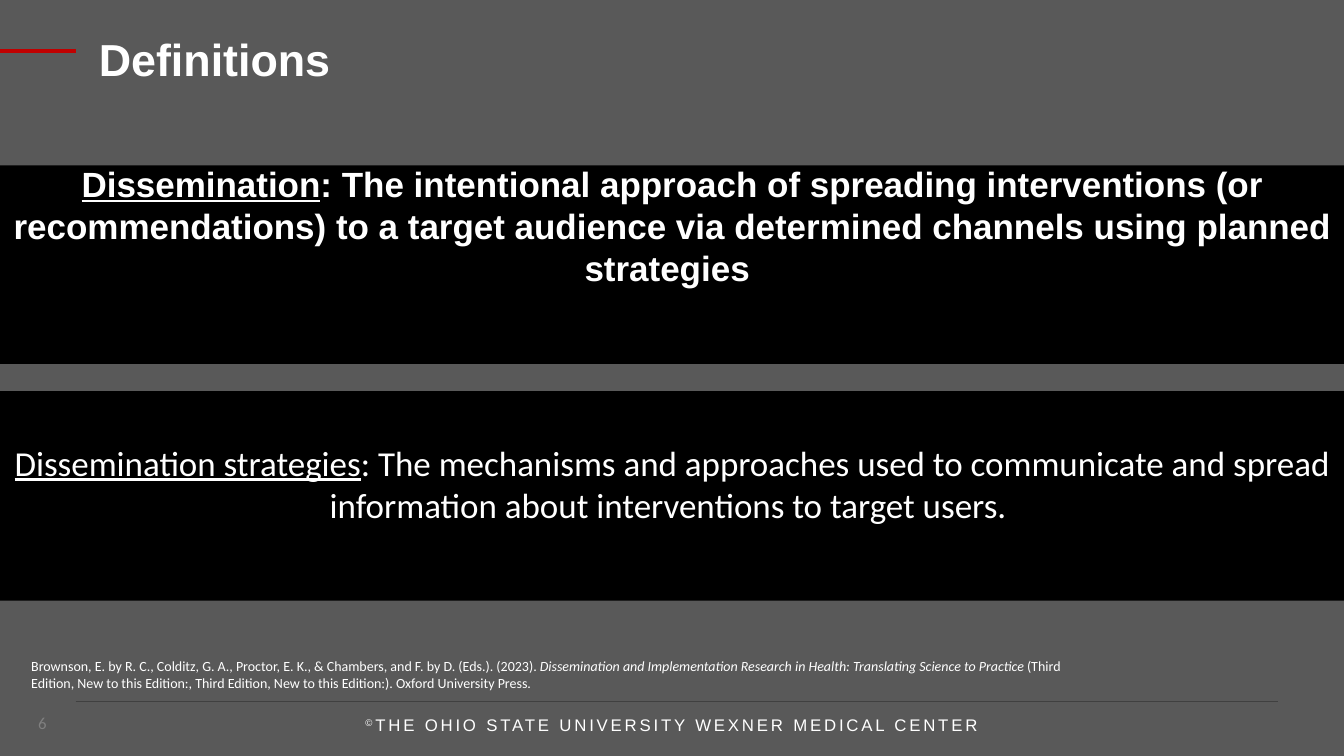
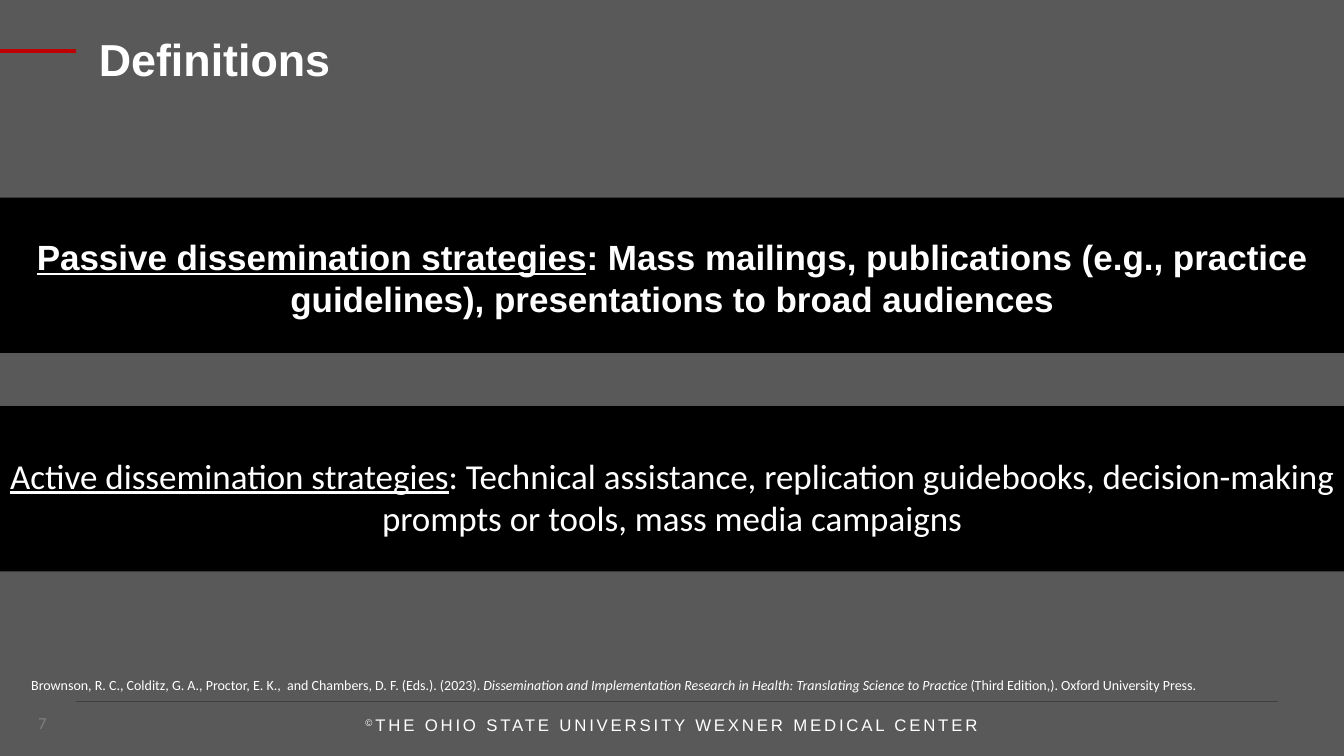
from lxml.etree import SubElement
from pptx import Presentation
from pptx.dml.color import RGBColor
from pptx.enum.shapes import MSO_CONNECTOR, MSO_SHAPE
from pptx.enum.text import MSO_ANCHOR, MSO_AUTO_SIZE, PP_ALIGN
from pptx.oxml.ns import qn
from pptx.util import Inches, Pt

WIDE, HIGH = 13.33, 7.5
EDGE = 0.75
HUES = {"back": "595959", "band": "000000", "text": "FFFFFF",
        "mark": "C00000", "rule": "404040", "page": "808080"}
HEAD, BODY = "Arial", "Calibri"
BOOK = ("Dissemination and Implementation Research in Health: "
        "Translating Science to Practice")
OWNER = "THE OHIO STATE UNIVERSITY WEXNER MEDICAL CENTER"

PAGES = [
    {"page": 6, "pad": 0.75,
     "bands": [
         ((0, 1.64, WIDE, 1.97), "Dissemination",
          ": The intentional approach of spreading interventions (or "
          "recommendations) to a target audience via determined channels "
          "using planned strategies "),
         ((0, 3.88, WIDE, 2.08), "Dissemination strategies",
          ": The mechanisms and approaches used to communicate and spread "
          "information about interventions to target users. ")],
     "cite": ((0.31, 6.51, 10.29, 0.52),
              "Brownson, E. by R. C., Colditz, G. A., Proctor, E. K., & "
              "Chambers, and F. by D. (Eds.). (2023). ",
              " (Third Edition, New to this Edition:, Third Edition, New to "
              "this Edition:). Oxford University Press.")},
    {"page": 7, "pad": 0.33,
     "bands": [
         ((0, 1.96, WIDE, 1.54), "Passive dissemination strategies",
          ": Mass mailings, publications (e.g., practice guidelines), "
          "presentations to broad audiences"),
         ((0, 4.03, WIDE, 1.64), "Active dissemination strategies",
          ": Technical assistance, replication guidebooks, decision-making "
          "prompts or tools, mass media campaigns")],
     "cite": ((0.31, 6.7, 12.2, 0.35),
              "Brownson, R. C., Colditz, G. A., Proctor, E. K.,  and "
              "Chambers, D. F. (Eds.). (2023). ",
              " (Third Edition,). Oxford University Press.")},
]


def hue(name):
    return RGBColor.from_string(HUES[name])


def place(shape, box):
    shape.left, shape.top, shape.width, shape.height = map(Inches, box)


def setup(shape, anchor, pads):
    """Set the text frame; pads are left, top, right and bottom."""
    frame = shape.text_frame
    frame.word_wrap = True
    frame.auto_size = MSO_AUTO_SIZE.NONE
    frame.vertical_anchor = anchor
    (frame.margin_left, frame.margin_top,
     frame.margin_right, frame.margin_bottom) = map(Inches, pads)
    return frame.paragraphs[0]


def write(para, texts, font, size, color="text", bold=False):
    """Add one run for each text and return the runs."""
    runs = []
    for text in texts:
        run = para.add_run()
        run.text = text
        run.font.name, run.font.size, run.font.bold = font, Pt(size), bold
        run.font.color.rgb = hue(color)
        runs.append(run)
    return runs


def label(slide, box, pads=(0, 0.01, 0, 0)):
    return setup(slide.shapes.add_textbox(*map(Inches, box)),
                 MSO_ANCHOR.TOP, pads)


def line(slide, start, end, y, color, width):
    item = slide.shapes.add_connector(
        MSO_CONNECTOR.STRAIGHT, *map(Inches, (start, y, end, y)))
    item.line.color.rgb = hue(color)
    item.line.width = Pt(width)
    SubElement(item._element.spPr, qn("a:effectLst"))


def header(slide, text):
    line(slide, 0, EDGE, 0.51, "mark", 3)
    title = slide.shapes.title
    place(title, (0.88, 0.34, 12.07, 0.54))
    para = setup(title, MSO_ANCHOR.MIDDLE, (0.1, 0.05, 0.1, 0.05))
    para.alignment = PP_ALIGN.LEFT
    para.line_spacing = 0.9
    write(para, [text], HEAD, 32, bold=True)


def footer(slide, page):
    line(slide, EDGE, WIDE - 0.65, 6.96, "rule", 0.75)
    para = label(slide, (0.28, 7.02, 1.65, 0.3), (0.1, 0.05, 0.1, 0.05))
    write(para, [str(page)], BODY, 12, "page")
    para = label(slide, (0, 7.13, WIDE, 0.16), (0, 0, 0, 0))
    para.alignment = PP_ALIGN.CENTER
    para.line_spacing = 0.8
    runs = write(para, ["©", OWNER], HEAD, 12)
    for run in runs:
        run.font._element.set("spc", "200")
    runs[0].font._element.set("baseline", "30000")


def band(shape, box, pad, term, rest, font, bold):
    """Fill a full-width band with an underlined term and its meaning."""
    place(shape, box)
    shape.fill.solid()
    shape.fill.fore_color.rgb = hue("band")
    shape.line.fill.background()
    para = setup(shape, MSO_ANCHOR.BOTTOM, (0, 0, 0, pad))
    props = para._p.get_or_add_pPr()
    props.set("marL", "0")
    props.set("indent", "0")
    SubElement(props, qn("a:buNone"))
    para.alignment = PP_ALIGN.CENTER
    para.line_spacing = Pt(30)
    para.space_before = Pt(0)
    runs = write(para, [term, rest], font, 25, bold=bold)
    runs[0].font.underline = True


def cite(slide, box, before, after):
    runs = write(label(slide, box), [before, BOOK, after], BODY, 10)
    runs[1].font.italic = True


def build(deck, data):
    slide = deck.slides.add_slide(deck.slide_layouts[1])
    header(slide, "Definitions")
    first, second = data["bands"]
    band(slide.placeholders[1], first[0], data["pad"], *first[1:], HEAD, True)
    rect = slide.shapes.add_shape(MSO_SHAPE.RECTANGLE,
                                  *map(Inches, second[0]))
    rect.shadow.inherit = False
    band(rect, second[0], data["pad"], *second[1:], BODY, False)
    cite(slide, *data["cite"])
    footer(slide, data["page"])


def main():
    deck = Presentation()
    deck.slide_width, deck.slide_height = Inches(WIDE), Inches(HIGH)
    fill = deck.slide_master.background.fill
    fill.solid()
    fill.fore_color.rgb = hue("back")
    for data in PAGES:
        build(deck, data)
    deck.save("out.pptx")


if __name__ == "__main__":
    main()
